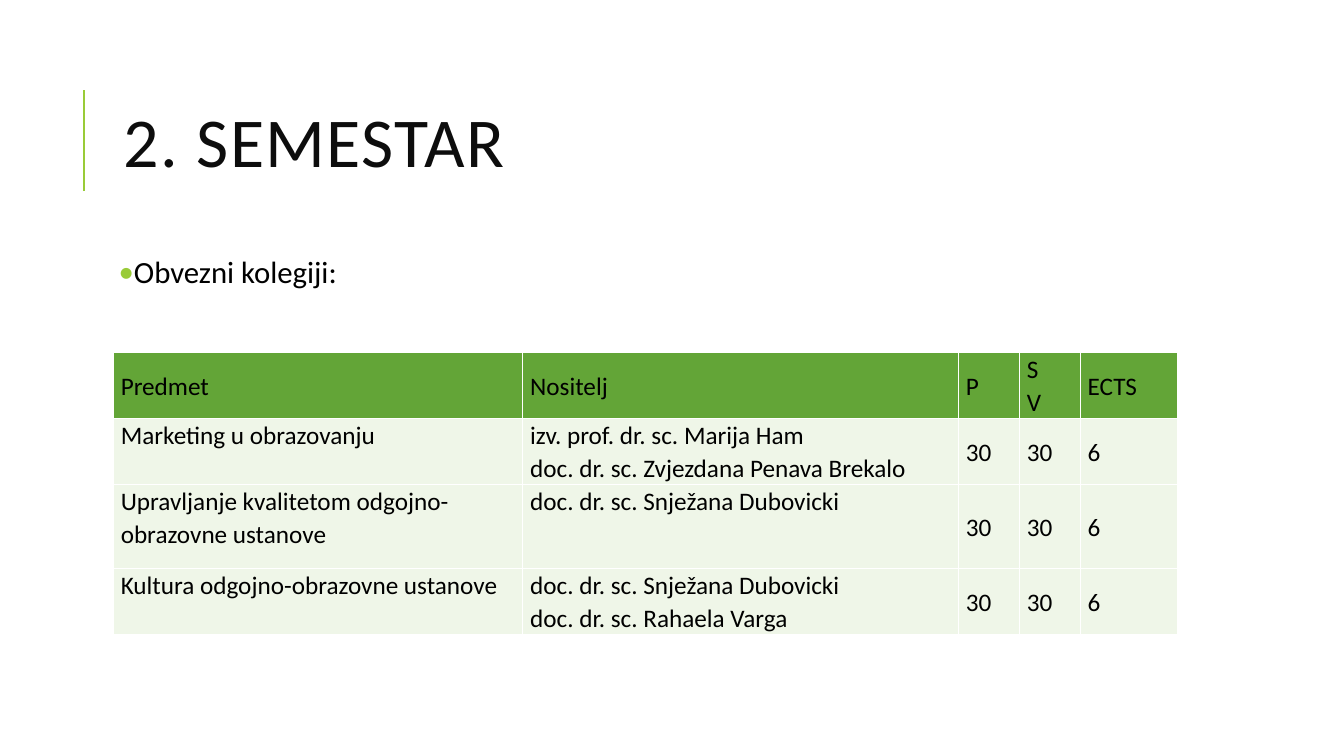
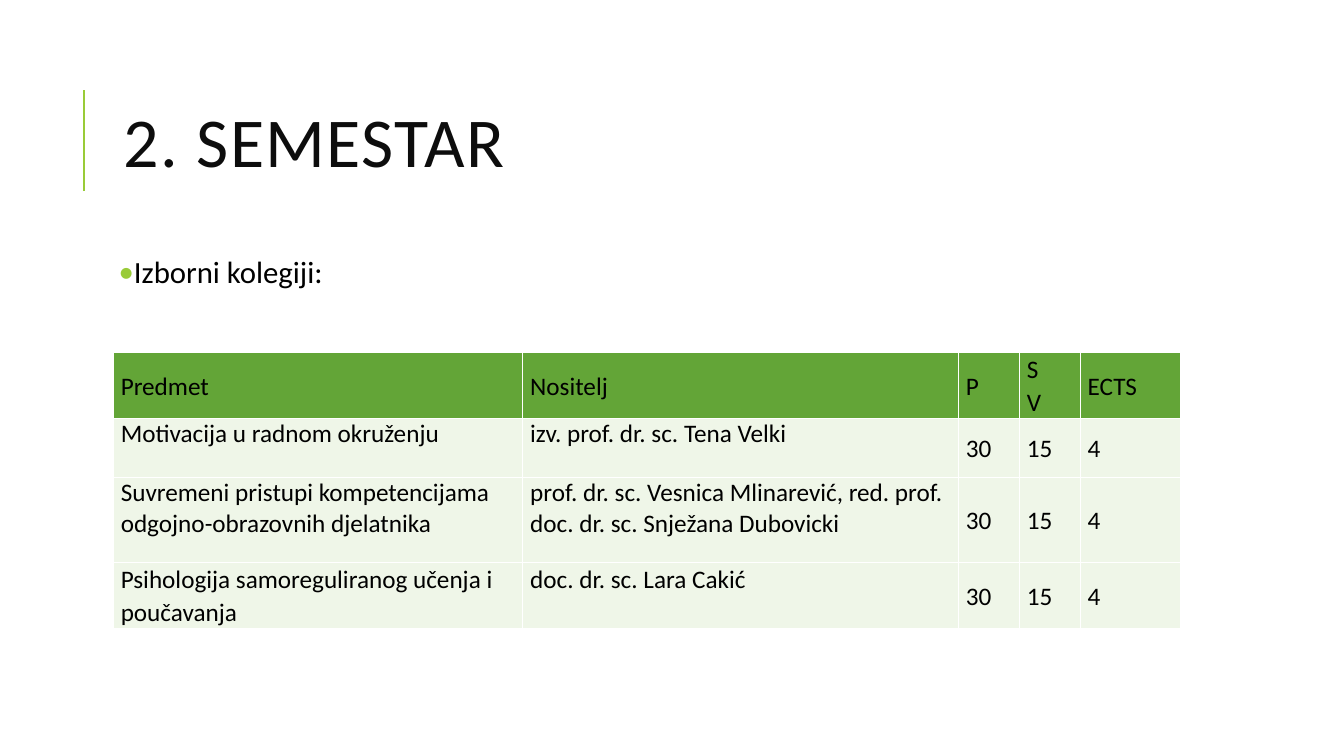
from lxml import etree
from pptx import Presentation
from pptx import util as u
from pptx.dml.color import RGBColor
from pptx.enum import shapes, text
from pptx.oxml.ns import qn

PX = 9525
FONT = "Calibri"
COLORS = {"accent": "99CB38", "title": "0D0D0D", "text": "000000",
          "header": "63A537", "row": "EFF6E8", "border": "FFFFFF"}
TITLE_BOX = (108, 61, 1020, 158)
BODY_BOX = (108, 240, 1020, 422)
TABLE_POS = (108, 336)
HEADER = ["Predmet", "Nositelj", "P", "S\nV", "ECTS"]

# Each row: subject, lecturers, P, SV, ECTS, height, line spacing
SLIDES = [
    {"heading": "Obvezni kolegiji:", "cols": [390, 415, 58, 58, 93], "rows": [
        ("Marketing u obrazovanju",
         "izv. prof. dr. sc. Marija Ham\ndoc. dr. sc. Zvjezdana Penava Brekalo",
         "30", "30", "6", 56, 1.07),
        ("Upravljanje kvalitetom odgojno-obrazovne ustanove",
         "doc. dr. sc. Snježana Dubovicki", "30", "30", "6", 80, 1.07),
        ("Kultura odgojno-obrazovne ustanove",
         "doc. dr. sc. Snježana Dubovicki\ndoc. dr. sc. Rahaela Varga",
         "30", "30", "6", 56, 1.07)]},
    {"heading": "Izborni kolegiji:", "cols": [390, 415, 58, 58, 95], "rows": [
        ("Motivacija u radnom okruženju", "izv. prof. dr. sc. Tena Velki",
         "30", "15", "4", 56, 1.0),
        ("Suvremeni pristupi kompetencijama odgojno-obrazovnih djelatnika",
         "prof. dr. sc. Vesnica Mlinarević, red. prof.\ndoc. dr. sc. Snježana Dubovicki",
         "30", "15", "4", 81, 1.0),
        ("Psihologija samoreguliranog učenja i poučavanja",
         "doc. dr. sc. Lara Cakić", "30", "15", "4", 39, 1.07)]},
]


def px(n):
    return u.Emu(n * PX)


def rgb(name):
    return RGBColor.from_string(COLORS[name])


def write(tf, content, size=18, color="text", spacing=1.0, before=0, after=0,
          anchor=text.MSO_ANCHOR.TOP, tracking=0):
    """Fill a text frame, one paragraph for each line of content."""
    tf.vertical_anchor = anchor
    tf.word_wrap = True
    for i, line in enumerate(content.split("\n")):
        p = tf.add_paragraph() if i else tf.paragraphs[0]
        p.alignment = text.PP_ALIGN.LEFT
        p.line_spacing = spacing
        p.space_before, p.space_after = u.Pt(before), u.Pt(after)
        r = p.add_run()
        r.text = line
        r.font.name, r.font.size, r.font.bold = FONT, u.Pt(size), False
        r.font.color.rgb = rgb(color)
        if tracking:
            r.font._element.set("spc", str(tracking * 100))


def place(sp, box):
    sp.left, sp.top, sp.width, sp.height = map(px, box)


def add_title(slide, content, box):
    """Title with the accent line to its left."""
    sp = slide.shapes.title
    place(sp, box)
    write(sp.text_frame, content, size=50, color="title", spacing=0.8,
          anchor=text.MSO_ANCHOR.MIDDLE, tracking=1)
    x, y = box[0] - 28, box[1] + 25
    line = slide.shapes.add_connector(shapes.MSO_CONNECTOR.STRAIGHT,
                                      px(x), px(y + 96), px(x), px(y))
    line.line.color.rgb = rgb("accent")
    line.line.width = u.Pt(1.5)
    etree.SubElement(line._element.spPr, qn("a:effectLst"))


def add_body(slide, content, box):
    sp = slide.placeholders[1]
    place(sp, box)
    tf = sp.text_frame
    tf.margin_left = tf.margin_right = tf.margin_top = tf.margin_bottom = px(5)
    tf.auto_size = text.MSO_AUTO_SIZE.NONE
    write(tf, content, size=22, spacing=0.9, before=12, after=2)
    for p in tf.paragraphs:
        pPr = p._p.get_or_add_pPr()
        pPr.set("marL", str(px(10)))
        pPr.set("indent", str(-px(10)))
        clr = etree.SubElement(pPr, qn("a:buClr"))
        etree.SubElement(clr, qn("a:srgbClr"), val=COLORS["accent"])
        etree.SubElement(pPr, qn("a:buFont"), typeface=FONT)
        etree.SubElement(pPr, qn("a:buChar"), char="•")


def add_borders(cell):
    tcPr = cell._tc.get_or_add_tcPr()
    for i, side in enumerate(("lnL", "lnR", "lnT", "lnB")):
        ln = etree.Element(qn(f"a:{side}"), w=str(u.Pt(1)))
        fill = etree.SubElement(ln, qn("a:solidFill"))
        etree.SubElement(fill, qn("a:srgbClr"), val=COLORS["border"])
        tcPr.insert(i, ln)


def format_cell(cell, content, fill, spacing, middle):
    cell.margin_left = cell.margin_right = px(7)
    cell.margin_top = cell.margin_bottom = 0
    cell.fill.solid()
    cell.fill.fore_color.rgb = rgb(fill)
    write(cell.text_frame, content, spacing=spacing)
    cell.vertical_anchor = text.MSO_ANCHOR.MIDDLE if middle else text.MSO_ANCHOR.TOP
    add_borders(cell)


def add_courses(slide, cols, courses, pos):
    """Course table: a header row, then one row for each course."""
    rows = [(*HEADER, 56, 1.07), *courses]
    heights = [row[-2] for row in rows]
    frame = slide.shapes.add_table(len(rows), len(cols), px(pos[0]), px(pos[1]),
                                   px(sum(cols)), px(sum(heights)))
    table = frame.table
    table.horz_banding = False
    for col, width in zip(table.columns, cols):
        col.width = px(width)
    for i, (*values, height, spacing) in enumerate(rows):
        table.rows[i].height = px(height)
        for j, value in enumerate(values):
            numeric = j > 1
            format_cell(table.cell(i, j), value, "row" if i else "header",
                        1.07 if numeric else spacing, numeric or i == 0)


def add_semester_slide(prs, heading, cols, rows):
    slide = prs.slides.add_slide(prs.slide_layouts[1])
    add_title(slide, "2. SEMESTAR", TITLE_BOX)
    add_body(slide, heading, BODY_BOX)
    add_courses(slide, cols, rows, TABLE_POS)


def main():
    prs = Presentation()
    prs.slide_width, prs.slide_height = px(1280), px(720)
    for content in SLIDES:
        add_semester_slide(prs, **content)
    prs.save("out.pptx")


if __name__ == "__main__":
    main()
